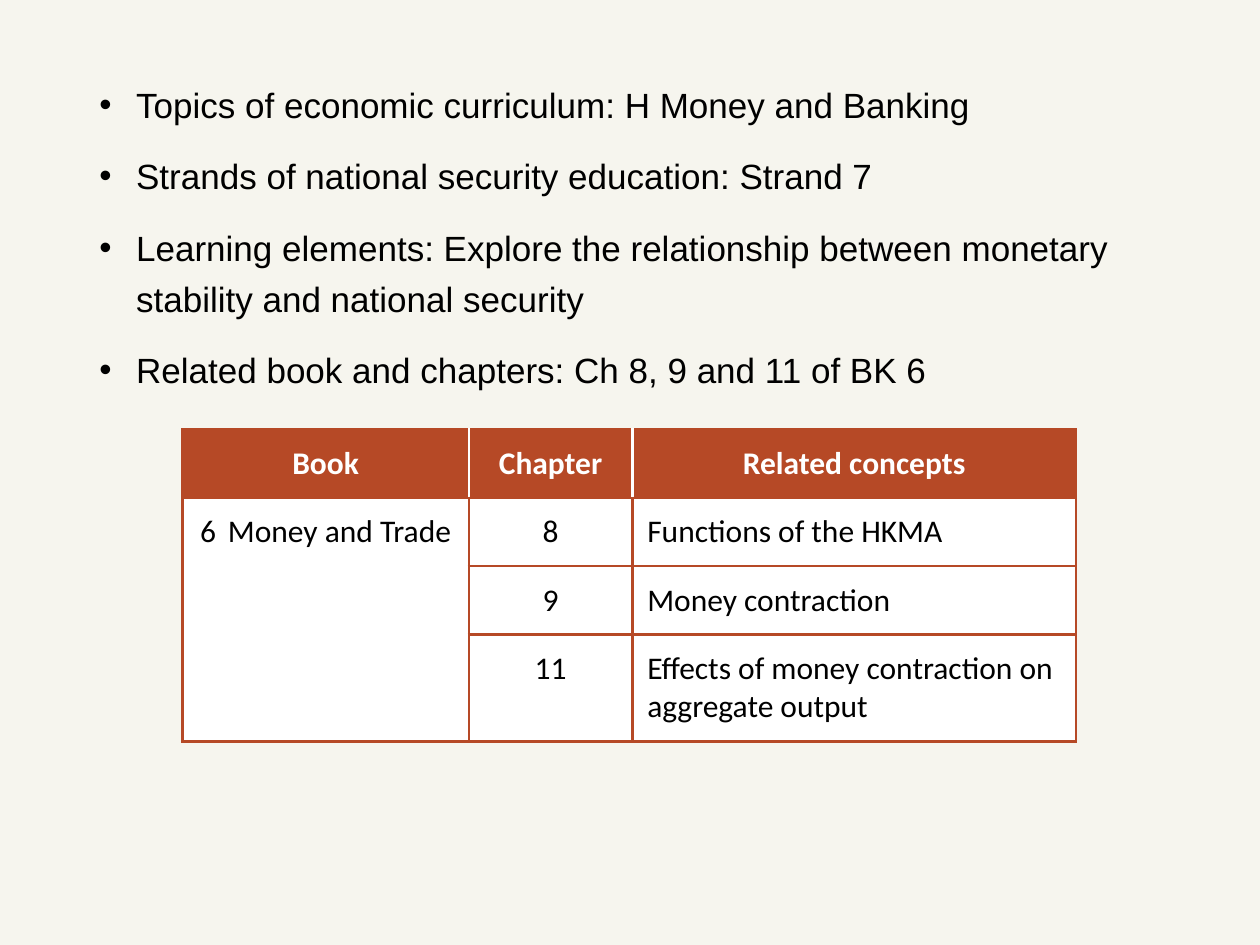
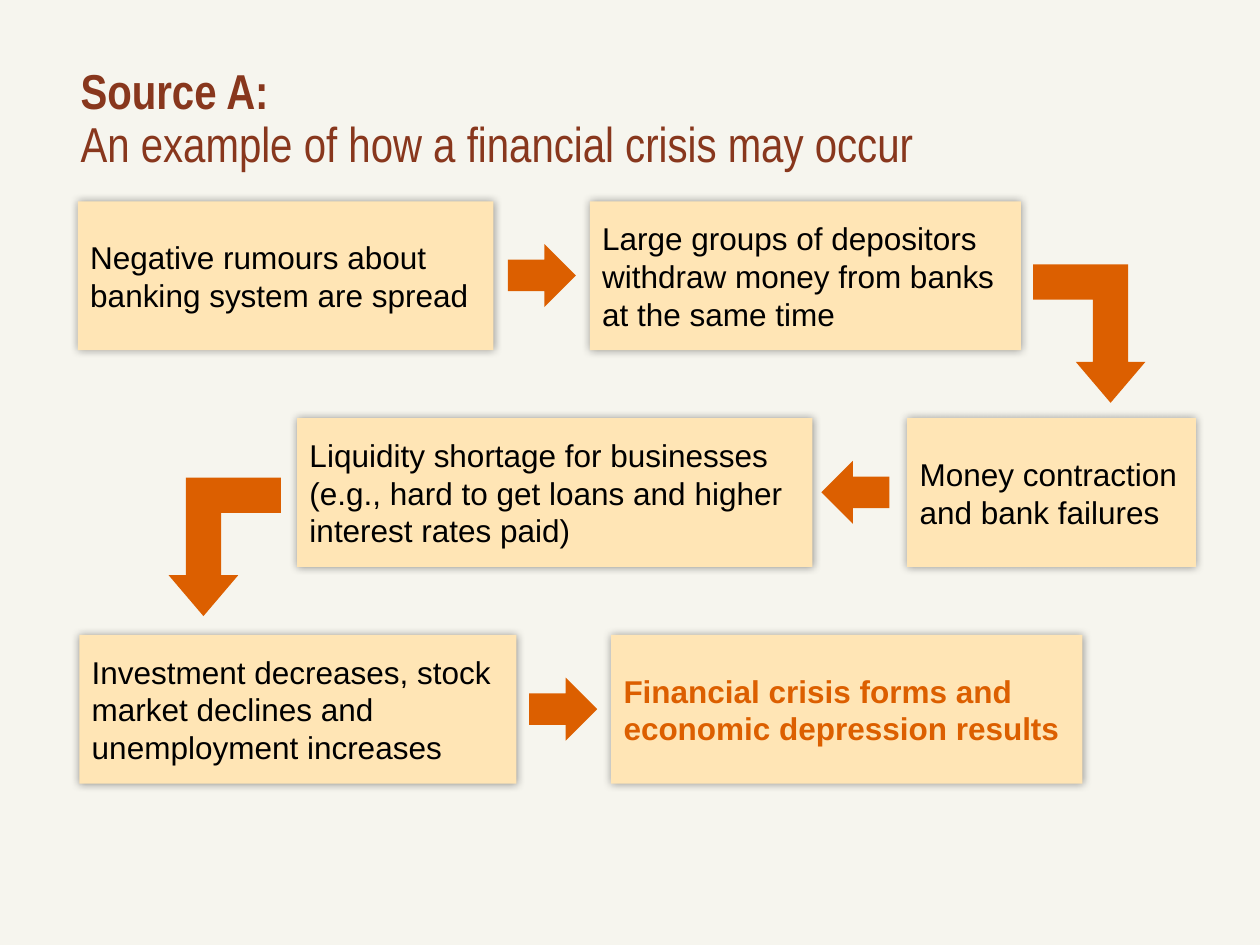
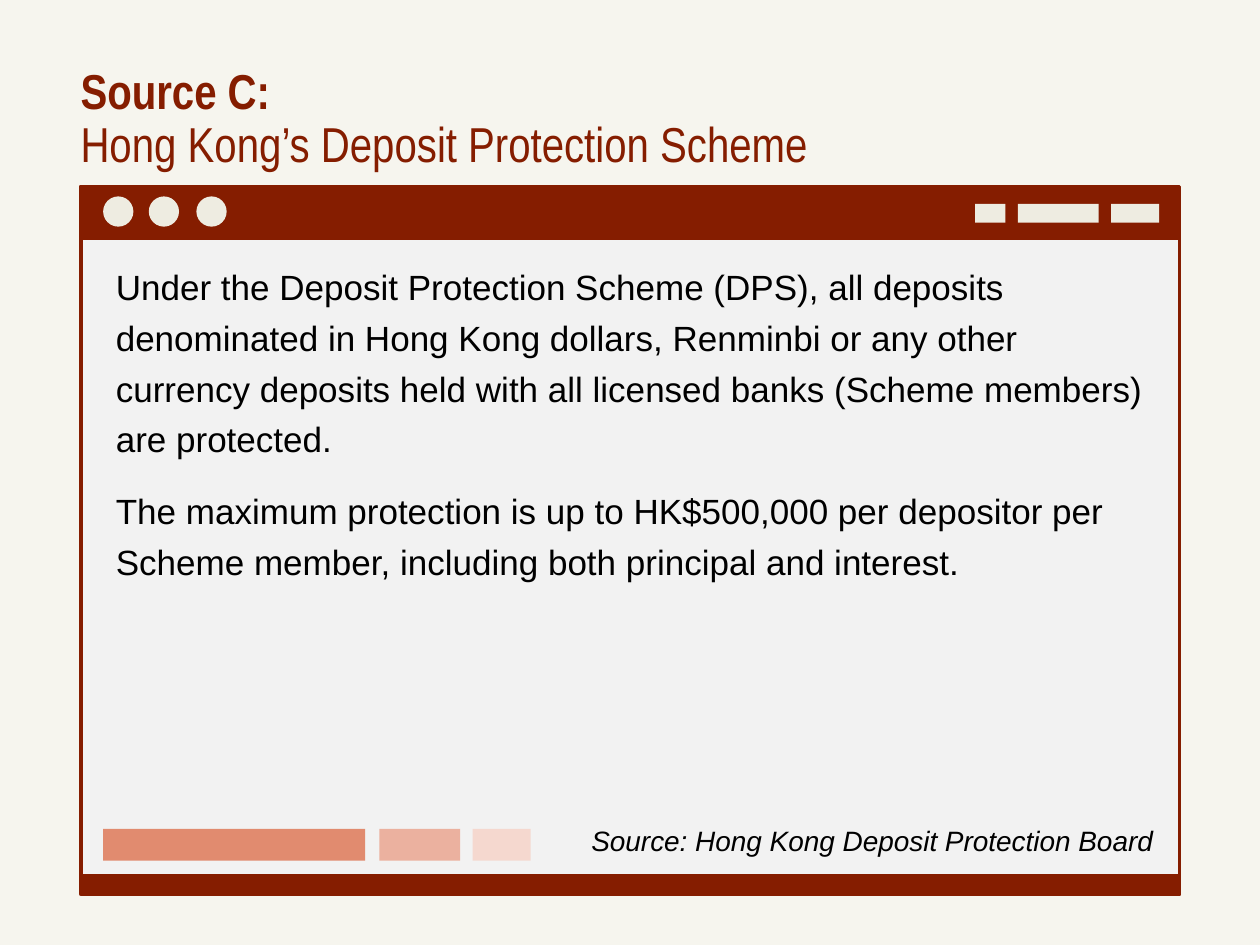
"""Build three slides on money, banking and national security."""
from lxml import etree
from pptx import Presentation
from pptx.dml.color import RGBColor
from pptx.enum.shapes import MSO_SHAPE
from pptx.enum.text import MSO_ANCHOR, MSO_AUTO_SIZE, PP_ALIGN
from pptx.oxml.ns import qn
from pptx.util import Cm, Pt

RECT, OVAL = MSO_SHAPE.RECTANGLE, MSO_SHAPE.OVAL
ARROW, BEND = MSO_SHAPE.RIGHT_ARROW, MSO_SHAPE.BENT_UP_ARROW
LEFT, MID, RIGHT = PP_ALIGN.LEFT, PP_ALIGN.CENTER, PP_ALIGN.RIGHT
CENTRE, FIXED = MSO_ANCHOR.MIDDLE, MSO_AUTO_SIZE.NONE

INK = {
    "page": "F6F5EE", "black": "000000", "white": "FFFFFF", "rust": "B64926",
    "brown": "88371D", "wine": "851D00", "sand": "FFE5B5", "orange": "DC5F00",
    "pane": "F2F2F2", "cream": "EEECE1", "coral": "E18B6F", "rose": "EBB19F",
    "blush": "F5D8CF",
}
HEAD = {"name": "Arial Narrow", "size": Pt(28)}
BODY = {"name": "Arial", "size": Pt(20), "bold": False}
NOTE = {"name": "Arial", "size": Pt(18)}
CELL = {"name": "Calibri", "size": Pt(18)}
CITE = {"name": "Arial", "size": Pt(16), "italic": True}
PARA = {"line_spacing": Pt(29), "space_before": Pt(12), "alignment": LEFT}
INSET = {f"margin_{side}": Cm(0.3) for side in ("left", "right", "top", "bottom")}


def shade(name):
    """Return the named colour."""
    return RGBColor.from_string(INK[name])


def apply(item, form):
    """Set each format value on the item."""
    for key, value in form.items():
        setattr(item, key, value)


def indent(para, left, first):
    """Set left and first-line indents in centimetres."""
    props = para._p.get_or_add_pPr()
    props.set("marL", str(Cm(left)))
    props.set("indent", str(Cm(first)))
    return props


class Deck:
    """Hold the style and the current slide."""

    def __init__(self):
        """Start an empty deck with a shared background."""
        self.show = Presentation()
        self.show.slide_width, self.show.slide_height = Cm(25.4), Cm(19.05)
        back = self.show.slide_master.background.fill
        back.solid()
        back.fore_color.rgb = shade("page")

    def page(self, layout):
        """Add a slide with the numbered layout."""
        self.slide = self.show.slides.add_slide(self.show.slide_layouts[layout])
        self.shapes = self.slide.shapes

    def say(self, para, text, form, ink="black"):
        """Add a formatted run to a paragraph."""
        run = para.add_run()
        run.text = text
        apply(run.font, form)
        run.font.color.rgb = shade(ink)

    def place(self, holder, left, top, width, height):
        """Move a placeholder to the front and return its text frame."""
        apply(holder, {"left": Cm(left), "top": Cm(top),
                       "width": Cm(width), "height": Cm(height)})
        holder.element.getparent().append(holder.element)
        holder.text_frame.auto_size = FIXED
        return holder.text_frame

    def title(self, label, text, ink):
        """Fill the title with a bold label above a plain line."""
        frame = self.place(self.slide.shapes.title, 1.37, 0.58, 22.68, 3.68)
        frame.vertical_anchor = CENTRE
        para = frame.paragraphs[0]
        apply(para, {"alignment": LEFT, "line_spacing": 0.9})
        self.say(para, label, HEAD | {"bold": True}, ink)
        para.add_line_break()
        self.say(para, text, HEAD | {"bold": False}, ink)

    def body(self, lines, area, bullet=True):
        """Fill the body placeholder with paragraphs."""
        frame = self.place(self.slide.placeholders[1], *area)
        for count, line in enumerate(lines):
            para = frame.add_paragraph() if count else frame.paragraphs[0]
            apply(para, PARA)
            self.say(para, line, BODY)
            if bullet:
                indent(para, 0.74, -0.74)
            else:
                etree.SubElement(indent(para, 0, 0), qn("a:buNone"))

    def shape(self, kind, left, top, width, height, fill, line=None, weight=1):
        """Add a flat preset shape."""
        item = self.shapes.add_shape(kind, Cm(left), Cm(top), Cm(width), Cm(height))
        item.shadow.inherit = False
        item.fill.solid()
        item.fill.fore_color.rgb = shade(fill)
        if line:
            item.line.color.rgb = shade(line)
            item.line.width = Pt(weight)
        else:
            item.line.fill.background()
        return item

    def card(self, left, top, width, text, ink="black", bold=False):
        """Add a text box with a soft shadow."""
        item = self.shape(RECT, left, top, width, 3, "sand")
        glow = etree.SubElement(item.element.spPr.find(qn("a:effectLst")),
                                qn("a:outerShdw"), blurRad=str(Pt(5)), dist="0",
                                dir="0", algn="ctr", rotWithShape="0")
        tone = etree.SubElement(glow, qn("a:srgbClr"), val=INK["black"])
        etree.SubElement(tone, qn("a:alpha"), val="40000")
        apply(item.text_frame, {"word_wrap": True, "vertical_anchor": CENTRE})
        para = item.text_frame.paragraphs[0]
        para.alignment = LEFT
        self.say(para, text, NOTE | {"bold": bold}, ink)

    def arrow(self, left, top, flip=False, bent=False):
        """Add a straight or bent block arrow."""
        kind, width, height = (BEND, 2.26, 2.79) if bent else (ARROW, 1.37, 1.27)
        item = self.shape(kind, left, top, width, height, "orange")
        if bent:
            item.rotation = 180
            for spot, value in enumerate((0.314, 0.31, 0.365)):
                item.adjustments[spot] = value
        if flip:
            item.element.spPr.find(qn("a:xfrm")).set("flipH", "1")

    def label(self, text, left, top, width, height):
        """Add a right-aligned source line."""
        box = self.shapes.add_textbox(Cm(left), Cm(top), Cm(width), Cm(height))
        box.text_frame.word_wrap = True
        para = box.text_frame.paragraphs[0]
        para.alignment = RIGHT
        self.say(para, text, CITE)

    def edge(self, cell, inks):
        """Draw cell borders in left, right, top, bottom order."""
        props = cell._tc.get_or_add_tcPr()
        for spot, (side, ink) in enumerate(zip("LRTB", inks)):
            line = etree.Element(qn(f"a:ln{side}"), w=str(Pt(1.5)))
            fill = etree.SubElement(line, qn("a:solidFill"))
            etree.SubElement(fill, qn("a:srgbClr"), val=INK[ink])
            props.insert(spot, line)

    def table(self, rows, left, top, widths, heights):
        """Add a bordered table with a filled header row."""
        grid = self.shapes.add_table(len(rows), len(widths), Cm(left), Cm(top),
                                     Cm(sum(widths)), Cm(sum(heights))).table
        grid.horz_banding = False
        for col, width in zip(grid.columns, widths):
            col.width = Cm(width)
        last = len(widths) - 1
        for y, (row, height) in enumerate(zip(rows, heights)):
            grid.rows[y].height = Cm(height)
            for x, text in enumerate(row):
                cell, head = grid.cell(y, x), y == 0
                apply(cell, INSET)
                cell.fill.solid()
                cell.fill.fore_color.rgb = shade("rust" if head else "white")
                self.edge(cell, ("white" if head and x > 0 else "rust",
                                 "white" if head and x < last else "rust",
                                 "rust", "rust"))
                if text:
                    para = cell.text_frame.paragraphs[0]
                    para.alignment = MID if head or x < last else LEFT
                    if "\t" in text:
                        indent(para, 0.56, -0.56)
                    self.say(para, text, CELL | {"bold": head},
                             "white" if head else "black")
        grid.cell(1, 0).merge(grid.cell(len(rows) - 1, 0))

    def panel(self):
        """Draw the grouped window frame with its dots and bars."""
        self.shapes = self.slide.shapes.add_group_shape().shapes
        for top, height, fill, weight in ((3.76, 14.27, "pane", 2.25),
                                          (3.76, 1.07, "wine", 1),
                                          (17.63, 0.4, "wine", 1)):
            self.shape(RECT, 1.63, top, 22.15, height, fill, "wine", weight)
        for left in (2.08, 3, 3.96):
            self.shape(OVAL, left, 3.96, 0.61, 0.61, "cream")
        for left, width in ((19.66, 0.61), (20.52, 1.63), (22.4, 0.97)):
            self.shape(RECT, left, 4.11, width, 0.38, "cream")
        for left, width, fill in ((2.08, 5.28, "coral"), (7.65, 1.63, "rose"),
                                  (9.53, 1.17, "blush")):
            self.shape(RECT, left, 16.71, width, 0.64, fill)
        self.shapes = self.slide.shapes


def topics(deck):
    """Build the curriculum slide."""
    deck.page(1)
    head = deck.shapes.title.element
    head.getparent().remove(head)
    deck.body(["Topics of economic curriculum: H Money and Banking",
               "Strands of national security education: Strand 7",
               "Learning elements: Explore the relationship between monetary "
               "stability and national security",
               "Related book and chapters: Ch 8, 9 and 11 of BK 6"],
              (1.75, 1.37, 21.89, 7.26))
    deck.table([("Book", "Chapter", "Related concepts"),
                ("6\tMoney and Trade", "8", "Functions of the HKMA"),
                ("", "9", "Money contraction"),
                ("", "11", "Effects of money contraction on aggregate output")],
               3.68, 8.66, (5.77, 3.3, 8.94), (1.37, 1.37, 1.37, 2.16))


def crisis(deck):
    """Build the financial crisis flow slide."""
    deck.page(5)
    deck.title("Source A:", "An example of how a financial crisis may occur", "brown")
    tops = [4.06 + 4.37 * row for row in range(3)]
    for row, left, width, text in (
            (0, 1.57, 8.38, "Negative rumours about banking system are spread"),
            (0, 11.89, 8.69, "Large groups of depositors withdraw money from banks "
                             "at the same time"),
            (1, 18.29, 5.82, "Money contraction and bank failures"),
            (1, 5.99, 10.39, "Liquidity shortage for businesses (e.g., hard to get "
                             "loans and higher interest rates paid)"),
            (2, 1.6, 8.81, "Investment decreases, stock market declines and "
                           "unemployment increases")):
        deck.card(left, tops[row], width, text)
    deck.card(12.32, tops[2], 9.5,
              "Financial crisis forms and economic depression results", "orange", True)
    for top, left in zip(tops, (10.24, 16.56, 10.67)):
        deck.arrow(left, top + 0.86, flip=top == tops[1])
    deck.arrow(20.83, tops[0] + 1.27, flip=True, bent=True)
    deck.arrow(3.4, tops[1] + 1.2, bent=True)


def scheme(deck):
    """Build the deposit protection slide."""
    deck.page(1)
    deck.panel()
    deck.title("Source C:", "Hong Kong’s Deposit Protection Scheme", "wine")
    deck.body(["Under the Deposit Protection Scheme (DPS), all deposits denominated "
               "in Hong Kong dollars, Renminbi or any other currency deposits held "
               "with all licensed banks (Scheme members) are protected.",
               "The maximum protection is up to HK$500,000 per depositor per Scheme "
               "member, including both principal and interest."],
              (2.08, 5.05, 21.23, 11.68), bullet=False)
    deck.label("Source: Hong Kong Deposit Protection Board", 10.95, 16.48, 12.55, 0.94)


def main():
    """Build and save the deck."""
    deck = Deck()
    for build in (topics, crisis, scheme):
        build(deck)
    deck.show.save("out.pptx")


if __name__ == "__main__":
    main()
